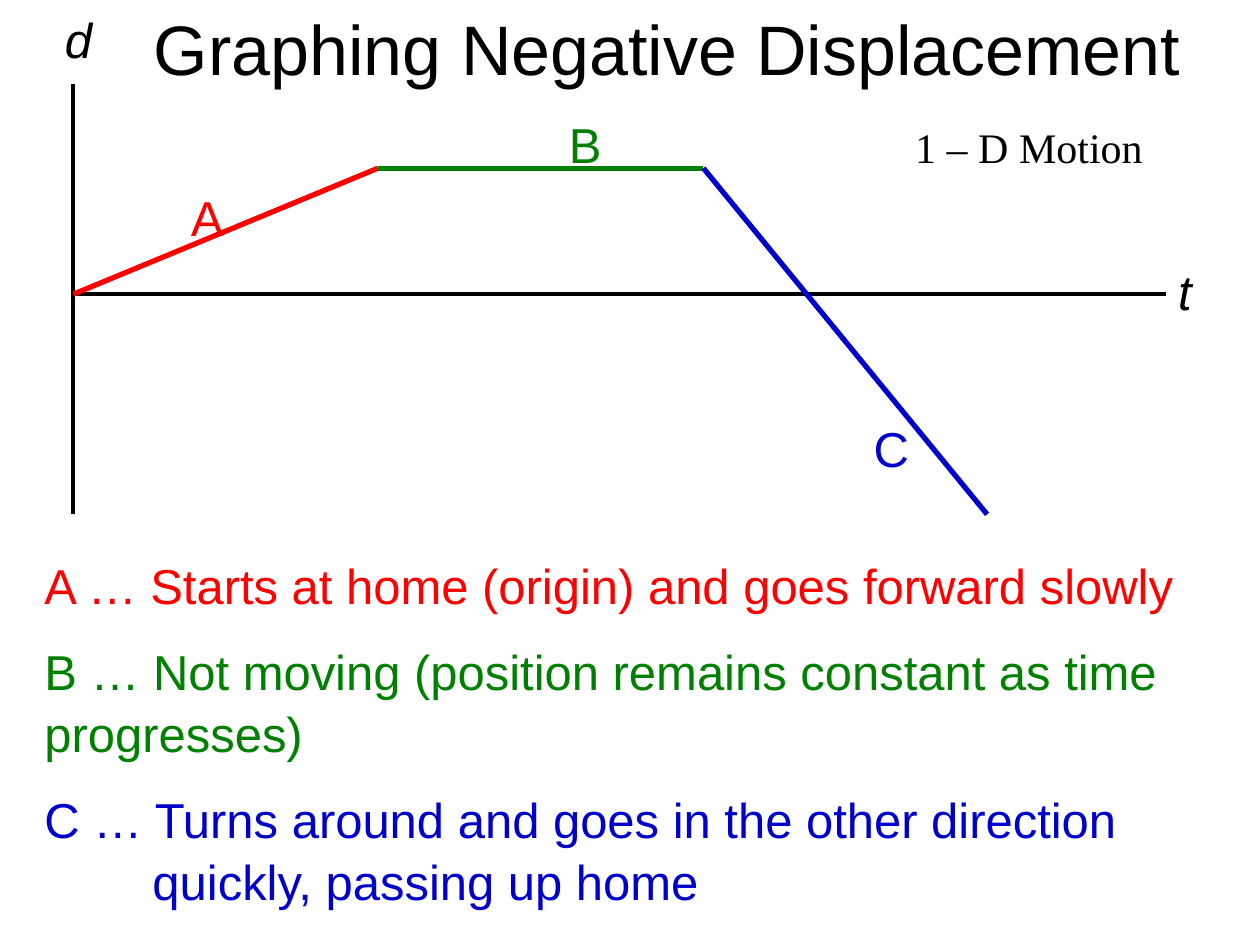
import dataclasses

import pptx
import pptx.dml.color
import pptx.enum.shapes
import pptx.enum.text
import pptx.oxml.ns
import pptx.shapes.base
import pptx.slide
import pptx.text.text
import pptx.util
from lxml import etree

Cm = pptx.util.Cm
Pt = pptx.util.Pt

INK = {"axis": "000000", "A": "FF0000", "B": "008000", "C": "0000CC"}

# Graph coordinates in cm
LEFT, RIGHT = 1.48, 23.5
TOP, ZERO, BASE = 1.7, 5.93, 10.37
PEAK = 3.39


@dataclasses.dataclass
class Line:
    start: tuple[float, float]
    end: tuple[float, float]
    ink: str
    width: float = 3


@dataclasses.dataclass
class Label:
    text: str
    left: float
    top: float
    width: float
    ink: str = "axis"
    size: int = 28
    font: str = "Arial"
    slant: bool = False
    pitch: float = 1.05


LINES = [
    Line((LEFT, TOP), (LEFT, BASE), "axis", 2.25),
    Line((LEFT, ZERO), (RIGHT, ZERO), "axis", 2.25),
    Line((LEFT, ZERO), (7.62, PEAK), "A"),
    Line((7.62, PEAK), (14.18, PEAK), "B"),
    Line((14.18, PEAK), (19.9, BASE), "C"),
]

LABELS = [
    Label("d", 1.06, 0, 1.9, slant=True),
    Label("t", RIGHT, 5.08, 1.9, slant=True),
    Label("A", 3.6, 3.6, 2.54, "A"),
    Label("B", 11.22, 2.12, 2.54, "B"),
    Label("C", 17.36, 8.26, 2.54, "C"),
    Label("1 – D Motion", 18.2, 2.33, 6.35, size=24,
          font="Times New Roman", pitch=1),
]

NOTES = {
    "A": "A … Starts at home (origin) and goes forward slowly",
    "B": "B … Not moving (position remains constant as time progresses)",
    "C": "C … Turns around and goes in the other direction\vquickly, passing up home",
}
HANG = {"C": 2.18}


def place(shape: pptx.shapes.base.BaseShape, left: float, top: float,
          width: float, height: float) -> None:
    shape.left, shape.top = Cm(left), Cm(top)
    shape.width, shape.height = Cm(width), Cm(height)


def style(para: pptx.text.text._Paragraph, ink: str, size: int = 28,
          font: str = "Arial", slant: bool = False) -> None:
    for run in para.runs:
        run.font.name = font
        run.font.size = Pt(size)
        run.font.italic = slant
        run.font.color.rgb = pptx.dml.color.RGBColor.from_string(INK[ink])


def draw_line(slide: pptx.slide.Slide, line: Line) -> None:
    ends = [Cm(n) for n in (*line.start, *line.end)]
    shape = slide.shapes.add_connector(
        pptx.enum.shapes.MSO_CONNECTOR.STRAIGHT, *ends)
    shape.line.width = Pt(line.width)
    shape.line.color.rgb = pptx.dml.color.RGBColor.from_string(INK[line.ink])
    etree.SubElement(shape._element.spPr, pptx.oxml.ns.qn("a:effectLst"))


def draw_label(slide: pptx.slide.Slide, label: Label) -> None:
    box = slide.shapes.add_textbox(
        Cm(label.left), Cm(label.top), Cm(label.width), Cm(1.45))
    frame = box.text_frame
    frame.word_wrap = True
    frame.text = label.text
    para = frame.paragraphs[0]
    para.line_spacing = label.pitch
    style(para, label.ink, label.size, label.font, label.slant)


def fill_title(slide: pptx.slide.Slide) -> None:
    title = slide.shapes.title
    place(title, 2.12, 0, 22.65, 1.9)
    frame = title.text_frame
    frame.auto_size = pptx.enum.text.MSO_AUTO_SIZE.NONE
    frame.text = "Graphing Negative Displacement"
    style(frame.paragraphs[0], "axis", 40)


def fill_notes(slide: pptx.slide.Slide) -> None:
    body = slide.placeholders[1]
    place(body, 0.64, 11.01, 23.7, 7.37)
    frame = body.text_frame
    frame.auto_size = pptx.enum.text.MSO_AUTO_SIZE.NONE
    frame.text = "\n".join(note.replace("\v", "\v") for note in NOTES.values())
    for key, para in zip(NOTES, frame.paragraphs):
        para.line_spacing = 1.05
        para.space_before = Pt(14 if key != "A" else 0)
        props = para._p.get_or_add_pPr()
        hang = Cm(HANG.get(key, 0))
        props.set("marL", str(hang))
        props.set("indent", str(-hang))
        etree.SubElement(props, pptx.oxml.ns.qn("a:buNone"))
        style(para, key)


def main() -> None:
    deck = pptx.Presentation()
    deck.slide_width, deck.slide_height = Cm(25.4), Cm(19.05)
    slide = deck.slides.add_slide(deck.slide_layouts[1])
    fill_title(slide)
    for line in LINES:
        draw_line(slide, line)
    for label in LABELS:
        draw_label(slide, label)
    fill_notes(slide)
    deck.save("out.pptx")


if __name__ == "__main__":
    main()
